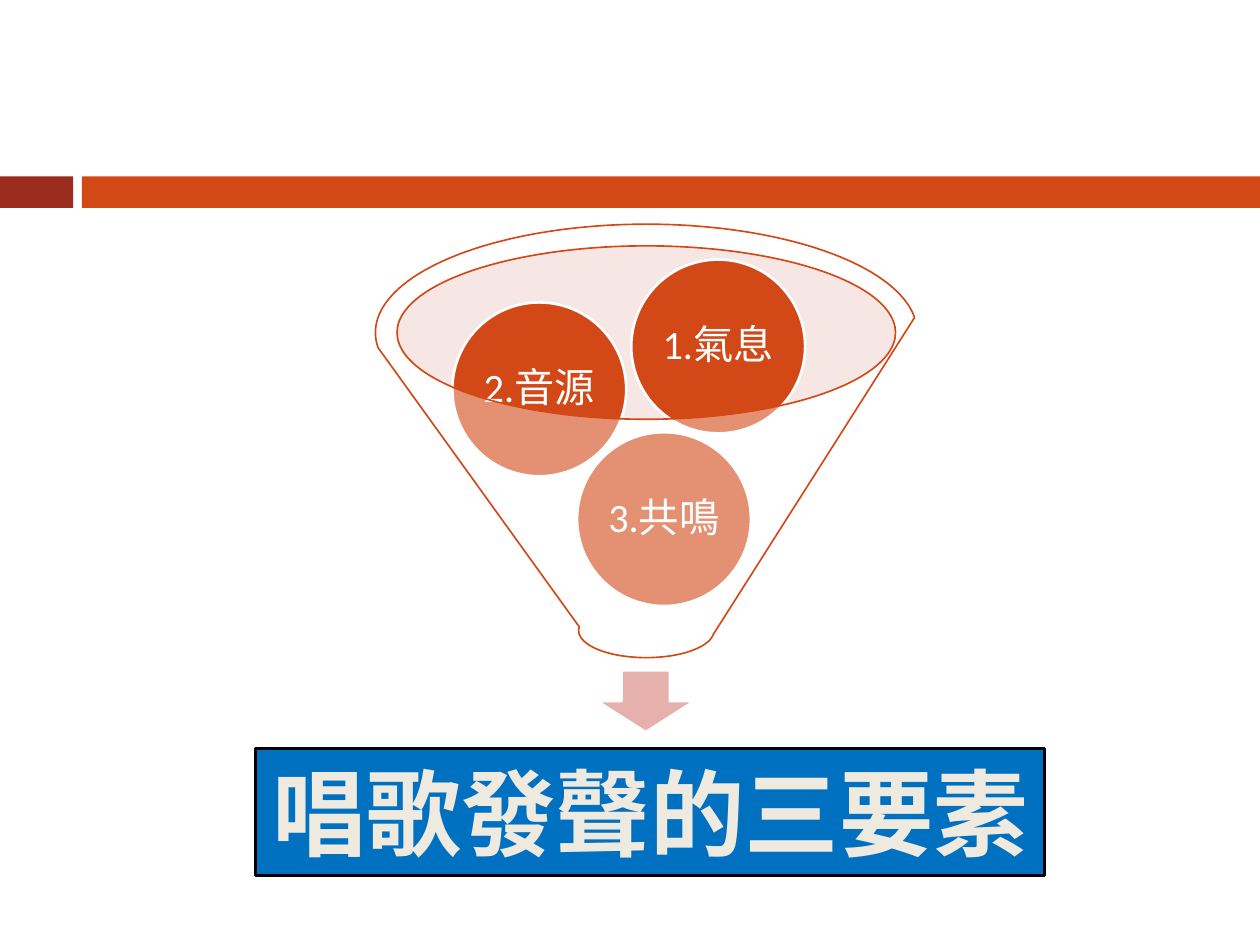
from pptx import Presentation
from pptx.dml.color import RGBColor
from pptx.enum.shapes import MSO_SHAPE as SHAPE
from pptx.enum.text import MSO_ANCHOR as ANCHOR, PP_ALIGN as ALIGN
from pptx.oxml.ns import qn
from pptx.util import Inches, Pt

ORANGE = RGBColor(0xD3, 0x48, 0x17)
DARK_RED = RGBColor(0x9B, 0x2D, 0x1F)
ROSE = RGBColor(0xEA, 0xC1, 0xBD)
PINK = RGBColor(0xE6, 0xB1, 0xAC)
BLUE = RGBColor(0x00, 0x70, 0xC0)
CREAM = RGBColor(0xEF, 0xEA, 0xDF)
WHITE = RGBColor(0xFF, 0xFF, 0xFF)
BLACK = RGBColor(0x00, 0x00, 0x00)

prs = Presentation()
prs.slide_width, prs.slide_height = Inches(10), Inches(7.5)
s = prs.slides.add_slide(prs.slide_layouts[6])


def add_shape(kind, x, y, w, h, fill, line=None, width=1.5, alpha=None):
    sp = s.shapes.add_shape(kind, Inches(x), Inches(y), Inches(w), Inches(h))
    sp.shadow.inherit = False
    sp.fill.solid()
    sp.fill.fore_color.rgb = fill
    if alpha is not None:
        color = sp.fill._xPr.find(qn("a:solidFill"))[0]
        color.makeelement(qn("a:alpha"))
        color.append(color.makeelement(qn("a:alpha"), {"val": str(alpha * 1000)}))
    if line is None:
        sp.line.fill.background()
    else:
        sp.line.color.rgb = line
        sp.line.width = Pt(width)
    return sp


def write(sp, text, size, color, bold=False, wrap=True, spacing=1.0, inset=None):
    tf = sp.text_frame
    tf.word_wrap = wrap
    tf.vertical_anchor = ANCHOR.MIDDLE
    if inset is not None:
        tf.margin_left = tf.margin_right = Inches(inset)
        tf.margin_top = tf.margin_bottom = Inches(inset)
    p = tf.paragraphs[0]
    p.alignment = ALIGN.CENTER
    p.line_spacing = spacing
    r = p.add_run()
    r.text = text
    r.font.name = "Calibri"
    r.font.size = Pt(size)
    r.font.bold = bold
    r.font.color.rgb = color


# Header band
add_shape(SHAPE.RECTANGLE, 0, 1.4, 0.58, 0.25, DARK_RED)
add_shape(SHAPE.RECTANGLE, 0.65, 1.4, 9.35, 0.25, ORANGE)

# Funnel mouth and outgoing arrow
add_shape(SHAPE.OVAL, 3.14, 1.95, 3.96, 1.38, ROSE, alpha=40)
add_shape(SHAPE.DOWN_ARROW, 4.74, 5.32, 0.77, 0.49, PINK, WHITE)

# Balls falling into the funnel
for text, x, y in [("3.共鳴", 4.58, 3.43), ("2.音源", 3.59, 2.4), ("1.氣息", 5.01, 2.06)]:
    ball = add_shape(SHAPE.OVAL, x, y, 1.38, 1.38, ORANGE, WHITE)
    write(ball, text, 23, WHITE, spacing=0.9, inset=0.03)

# Translucent funnel in front of the balls
add_shape(SHAPE.FUNNEL, 2.98, 1.78, 4.3, 3.44, WHITE, ORANGE, 0.94, alpha=40)

# Conclusion banner
banner = add_shape(SHAPE.RECTANGLE, 2.03, 5.94, 6.26, 1.01, BLUE, BLACK)
write(banner, "唱歌發聲的三要素", 54, CREAM, bold=True, wrap=False)

prs.save("out.pptx")
